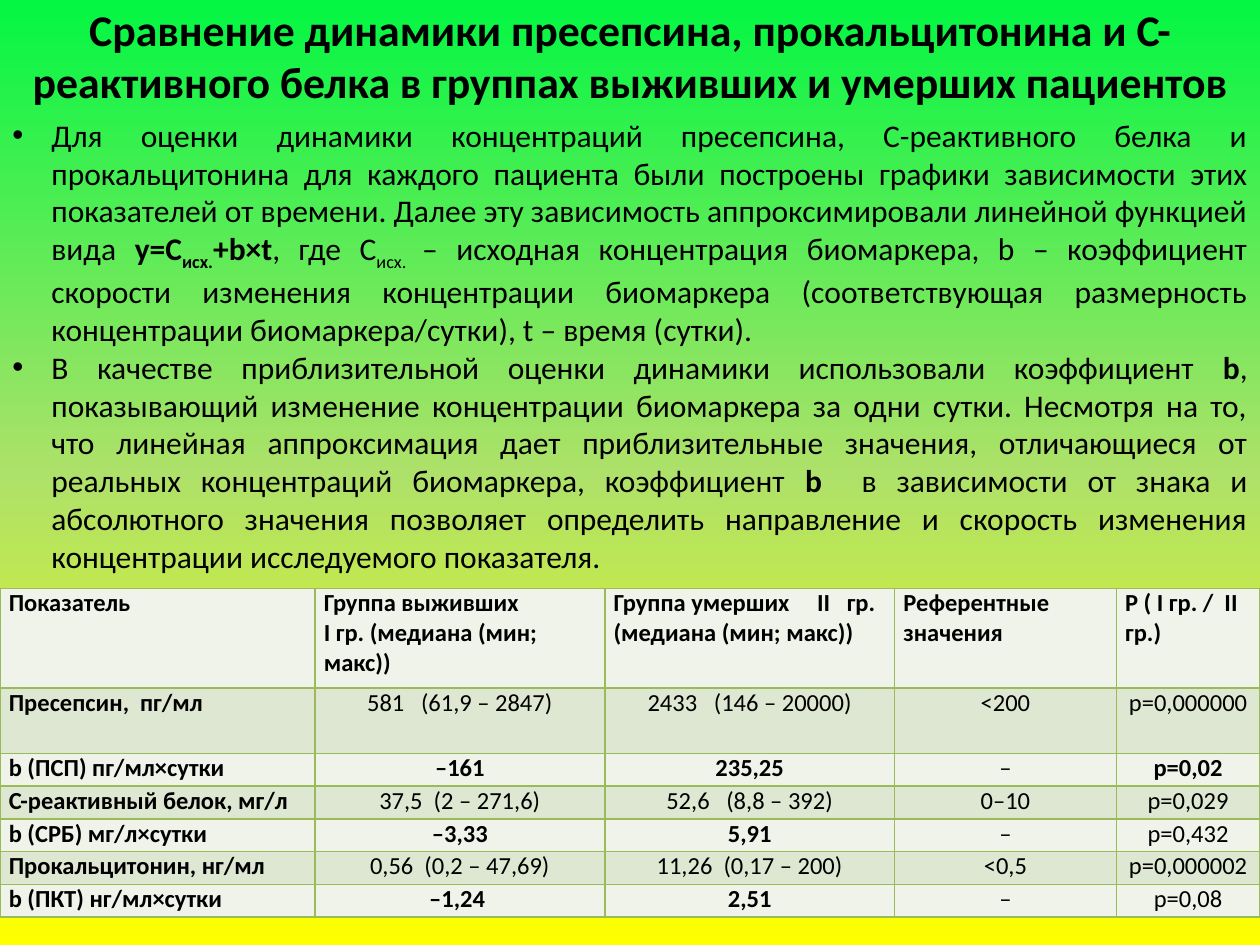
from copy import deepcopy

from lxml import etree
from pptx import Presentation
from pptx import util as u
from pptx.dml.color import RGBColor
from pptx.enum import text
from pptx.oxml import ns

BLACK = RGBColor(0x00, 0x00, 0x00)
GREEN = RGBColor(0x03, 0xF7, 0x43)
LIME = RGBColor(0xAE, 0xE1, 0x69)
YELLOW = RGBColor(0xFF, 0xFF, 0x00)
BORDER = RGBColor(0x9B, 0xBB, 0x59)
BANDS = (RGBColor(0xEF, 0xF3, 0xEA), RGBColor(0xDE, 0xE7, 0xD1))

TITLE = ("Сравнение динамики пресепсина, прокальцитонина и С-реактивного белка "
         "в группах выживших и умерших пациентов")

# Each span: its text, then any format that differs from plain
BULLETS = [
    [("Для оценки динамики концентраций пресепсина, C-реактивного белка и "
      "прокальцитонина для каждого пациента были построены графики зависимости этих "
      "показателей от времени. Далее эту зависимость аппроксимировали линейной "
      "функцией вида ", {}),
     ("y=C", {"bold": True}),
     ("исх.", {"bold": True, "subscript": True}),
     ("+b×t", {"bold": True}),
     (", где C", {}),
     ("исх. ", {"subscript": True}),
     ("– исходная концентрация биомаркера, b – коэффициент скорости изменения "
      "концентрации биомаркера (соответствующая размерность концентрации "
      "биомаркера/сутки), t – время (сутки). ", {})],
    [("В качестве приблизительной оценки динамики использовали коэффициент ", {}),
     ("b", {"bold": True}),
     (", показывающий изменение концентрации биомаркера за одни сутки. Несмотря на "
      "то, что линейная аппроксимация дает приблизительные значения, отличающиеся от "
      "реальных концентраций биомаркера, коэффициент ", {}),
     ("b ", {"bold": True}),
     (" в зависимости от знака и абсолютного значения позволяет определить "
      "направление и скорость изменения концентрации исследуемого показателя.", {})],
]

ROWS = [
    ("Показатель", "Группа выживших\nI гр. (медиана (мин; макс))",
     "Группа умерших     II   гр. (медиана (мин; макс))",
     "Референтные значения", "Р ( I гр. /  II   гр.)"),
    ("Пресепсин,  пг/мл", "581   (61,9 – 2847)", "2433   (146 – 20000)",
     "<200", "p=0,000000"),
    ("b (ПСП) пг/мл×сутки", "–161", "235,25", "–", "p=0,02"),
    ("С-реактивный белок, мг/л", "37,5  (2 – 271,6)", "52,6   (8,8 – 392)",
     "0–10", "p=0,029"),
    ("b (СРБ) мг/л×сутки", "–3,33", "5,91", "–", "p=0,432"),
    ("Прокальцитонин, нг/мл", "0,56  (0,2 – 47,69)", "11,26  (0,17 – 200)",
     "<0,5", "p=0,000002"),
    ("b (ПКТ) нг/мл×сутки", "–1,24 ", "2,51", "–", "p=0,08"),
]
COLUMN_WIDTHS = (2.5, 2.3, 2.3, 1.76, 1.14)
ROW_HEIGHTS = (0.79, 0.52) + (0.26,) * 5


def add_span(para, words, size, bold=False, subscript=False, font="Calibri", color=BLACK):
    span = para.add_run()
    span.text = words
    span.font.name = font
    span.font.size = u.Pt(size)
    span.font.bold = bold
    span.font.color.rgb = color
    if subscript:
        span._r.get_or_add_rPr().set("baseline", "-25000")


def is_bold(row, column):
    """Headings, row names, slopes b and the significant p for a slope."""
    slope = ROWS[row][0].startswith("b ")
    return (row == 0 or column == 0 or (slope and column in (1, 2))
            or ROWS[row][column] == "p=0,02")


class SlideBuilder:
    title_size = 25
    body_size = 18
    table_size = 14

    def __init__(self, deck):
        self.page = deck.slides.add_slide(deck.slide_layouts[5])

    def background(self, first, middle, last):
        fill = self.page.background.fill
        fill.gradient()
        fill.gradient_angle = 270
        start = fill.gradient_stops[0]._gs
        start.addnext(deepcopy(start))
        for stop, color, position in zip(fill.gradient_stops, (first, middle, last), (0, 0.5, 1)):
            stop.color.rgb = color
            stop.position = position

    def title(self, words, left, top, width, height):
        box = self.page.shapes.title
        box.left, box.top = u.Inches(left), u.Inches(top)
        box.width, box.height = u.Inches(width), u.Inches(height)
        frame = box.text_frame
        frame.auto_size = text.MSO_AUTO_SIZE.NONE
        frame.vertical_anchor = text.MSO_ANCHOR.MIDDLE
        para = frame.paragraphs[0]
        para.alignment = text.PP_ALIGN.CENTER
        add_span(para, words, self.title_size, bold=True)

    def bullets(self, items, left, top, width, height, indent=0.31):
        box = self.page.shapes.add_textbox(*map(u.Inches, (left, top, width, height)))
        frame = box.text_frame
        frame.word_wrap = True
        frame.auto_size = text.MSO_AUTO_SIZE.SHAPE_TO_FIT_TEXT
        for index, spans in enumerate(items):
            para = frame.add_paragraph() if index else frame.paragraphs[0]
            para.alignment = text.PP_ALIGN.JUSTIFY
            props = para._p.get_or_add_pPr()
            props.set("marL", str(u.Inches(indent)))
            props.set("indent", str(-u.Inches(indent)))
            etree.SubElement(props, ns.qn("a:buFont"), typeface="Arial")
            etree.SubElement(props, ns.qn("a:buChar"), char="•")
            for words, style in spans:
                add_span(para, words, self.body_size, **style)

    def table(self, rows, left, top, widths, heights):
        frame = self.page.shapes.add_table(
            len(rows), len(widths),
            *map(u.Inches, (left, top, sum(widths), sum(heights))))
        grid = frame.table
        for column, width in zip(grid.columns, widths):
            column.width = u.Inches(width)
        for row, height in zip(grid.rows, heights):
            row.height = u.Inches(height)
        for r, values in enumerate(rows):
            for c, words in enumerate(values):
                centred = r > 0 and c > 0
                self.cell(grid.cell(r, c), words, BANDS[r % 2], is_bold(r, c), centred)

    def cell(self, cell, words, color, bold, centred):
        cell.margin_left = cell.margin_right = u.Inches(0.07)
        cell.margin_top = cell.margin_bottom = 0
        for index, line in enumerate(words.split("\n")):
            frame = cell.text_frame
            para = frame.add_paragraph() if index else frame.paragraphs[0]
            para.alignment = text.PP_ALIGN.CENTER if centred else text.PP_ALIGN.LEFT
            add_span(para, line, self.table_size, bold=bold)
        # Borders come before the fill in the cell properties
        props = cell._tc.get_or_add_tcPr()
        for side in ("a:lnL", "a:lnR", "a:lnT", "a:lnB"):
            line = etree.SubElement(props, ns.qn(side), w=str(u.Pt(1)))
            solid = etree.SubElement(line, ns.qn("a:solidFill"))
            etree.SubElement(solid, ns.qn("a:srgbClr"), val=str(BORDER))
        cell.fill.solid()
        cell.fill.fore_color.rgb = color


def main():
    deck = Presentation()
    deck.slide_width, deck.slide_height = u.Inches(10), u.Inches(7.5)
    slide = SlideBuilder(deck)
    slide.background(GREEN, LIME, YELLOW)
    slide.title(TITLE, 0, 0, 10, 0.87)
    slide.table(ROWS, 0, 4.67, COLUMN_WIDTHS, ROW_HEIGHTS)
    slide.bullets(BULLETS, 0, 0.87, 10, 3.74)
    deck.save("out.pptx")


if __name__ == "__main__":
    main()
